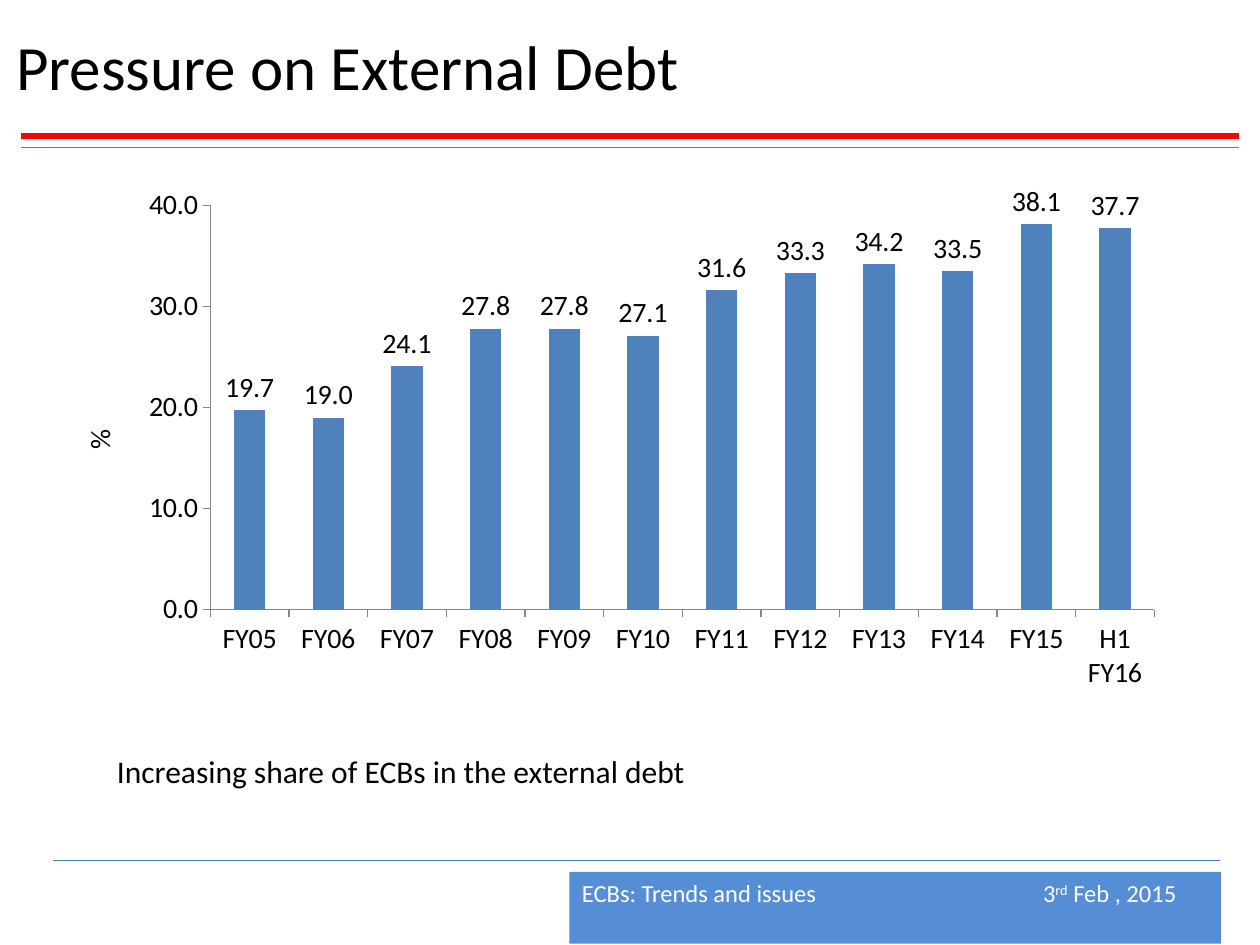
from lxml import etree
from pptx import Presentation
from pptx.chart.data import CategoryChartData
from pptx.dml.color import RGBColor
from pptx.enum.chart import XL_CHART_TYPE as Kind, XL_LABEL_POSITION as Pos, XL_TICK_MARK as Tick
from pptx.enum.shapes import MSO_CONNECTOR as Conn, MSO_SHAPE as Shape
from pptx.enum.text import MSO_ANCHOR as Anchor, PP_ALIGN as Align
from pptx.oxml import parse_xml
from pptx.oxml.ns import nsdecls, qn
from pptx.util import Inches, Pt


def tint(item, color):
    """Give a fill, line or font format a solid hex colour."""
    if hasattr(item, "solid"):
        item.solid()
        item.fore_color.rgb = RGBColor.from_string(color)
    elif hasattr(item, "color"):
        item.color.rgb = RGBColor.from_string(color)


def style(font, size, color="000000"):
    font.name = "Calibri"
    font.size = Pt(size)
    font.bold = False
    tint(font, color)


deck = Presentation()
deck.slide_width, deck.slide_height = Inches(10), Inches(7.5)
slide = deck.slides.add_slide(deck.slide_layouts[6])
shapes = slide.shapes

# Rules under the title and above the footer
rules = [
    (0.17, 9.83, 1.08, "FF0000", 3),
    (0.17, 9.83, 1.17, "4B7EBC", 0.75),
    (0.42, 9.68, 6.83, "4B7EBC", 0.75),
]
for left, right, y, color, width in rules:
    rule = shapes.add_connector(
        Conn.STRAIGHT, Inches(left), Inches(y), Inches(right), Inches(y))
    tint(rule.line, color)
    rule.line.width = Pt(width)
    etree.SubElement(rule.element.spPr, qn("a:effectLst"))

# Footer: topic, then the date at a tab stop
footer = shapes.add_shape(
    Shape.RECTANGLE, Inches(4.52), Inches(6.92), Inches(5.17), Inches(0.57))
footer.shadow.inherit = False
tint(footer.fill, "558ED5")
footer.line.fill.background()
frame = footer.text_frame
frame.word_wrap = True
frame.vertical_anchor = Anchor.TOP
para = frame.paragraphs[0]
para.alignment = Align.LEFT
stops = etree.SubElement(para._p.get_or_add_pPr(), qn("a:tabLst"))
etree.SubElement(stops, qn("a:tab"), pos=str(Inches(3.66)), algn="l")
for text in ("ECBs: Trends and issues\t3", "rd", " Feb , 2015"):
    run = para.add_run()
    run.text = text
    style(run.font, 14, "FFFFFF")
    if text == "rd":
        run.font._element.set("baseline", "30000")

# Title
title = shapes.add_textbox(Inches(0.03), Inches(0.03), Inches(9.97), Inches(0.97))
tint(title.line, "FFFFFF")
title.line.width = Pt(0.75)
frame = title.text_frame
frame.word_wrap = True
frame.vertical_anchor = Anchor.MIDDLE
frame.text = "Pressure on External Debt"
style(frame.paragraphs[0].runs[0].font, 36)

# Chart
data = CategoryChartData(number_format="0.0")
data.categories = [f"FY{year:02}" for year in range(5, 16)] + ["H1 FY16"]
data.add_series("Series 1", [
    19.7, 19.0, 24.1, 27.8, 27.8, 27.1, 31.6, 33.3, 34.2, 33.5, 38.1, 37.7])
chart = shapes.add_chart(
    Kind.COLUMN_CLUSTERED, Inches(0.42), Inches(1.42), Inches(8.92), Inches(4.17),
    data).chart
chart.has_legend = False
chart.has_title = False
style(chart.font, 16)

plot = chart.plots[0]
plot.gap_width = 150
plot.vary_by_categories = False
tint(plot.series[0].format.fill, "4F81BD")
plot.has_data_labels = True
labels = plot.data_labels
labels.show_value = True
labels.number_format = "0.0"
labels.number_format_is_linked = False
labels.position = Pos.OUTSIDE_END
style(labels.font, 16)

for axis in (chart.category_axis, chart.value_axis):
    axis.has_major_gridlines = False
    axis.major_tick_mark = Tick.OUTSIDE
    axis.minor_tick_mark = Tick.NONE
    tint(axis.format.line, "868686")
    axis.format.line.width = Pt(0.75)
    style(axis.tick_labels.font, 16)

axis = chart.value_axis
axis.minimum_scale, axis.maximum_scale, axis.major_unit = 0, 40, 10
axis.tick_labels.number_format = "0.0"
axis.tick_labels.number_format_is_linked = False
frame = axis.axis_title.text_frame
frame.text = "%"
style(frame.paragraphs[0].runs[0].font, 16)
frame._txBody.bodyPr.set("rot", "-5400000")
frame._txBody.bodyPr.set("vert", "horz")

# Fixed inner plot area, as shares of the chart
area = chart._chartSpace.chart.plotArea
for old in area.findall(qn("c:layout")):
    area.remove(old)
area.insert(0, parse_xml(
    f'<c:layout {nsdecls("c")}><c:manualLayout><c:layoutTarget val="inner"/>'
    '<c:xMode val="edge"/><c:yMode val="edge"/><c:x val="0.14"/><c:y val="0.05"/>'
    '<c:w val="0.84"/><c:h val="0.77"/></c:manualLayout></c:layout>'))

# Takeaway
note = shapes.add_textbox(Inches(0.83), Inches(5.92), Inches(4.82), Inches(0.4))
note.text_frame.word_wrap = False
note.text_frame.text = "Increasing share of ECBs in the external debt"
style(note.text_frame.paragraphs[0].runs[0].font, 18)

deck.save("out.pptx")
